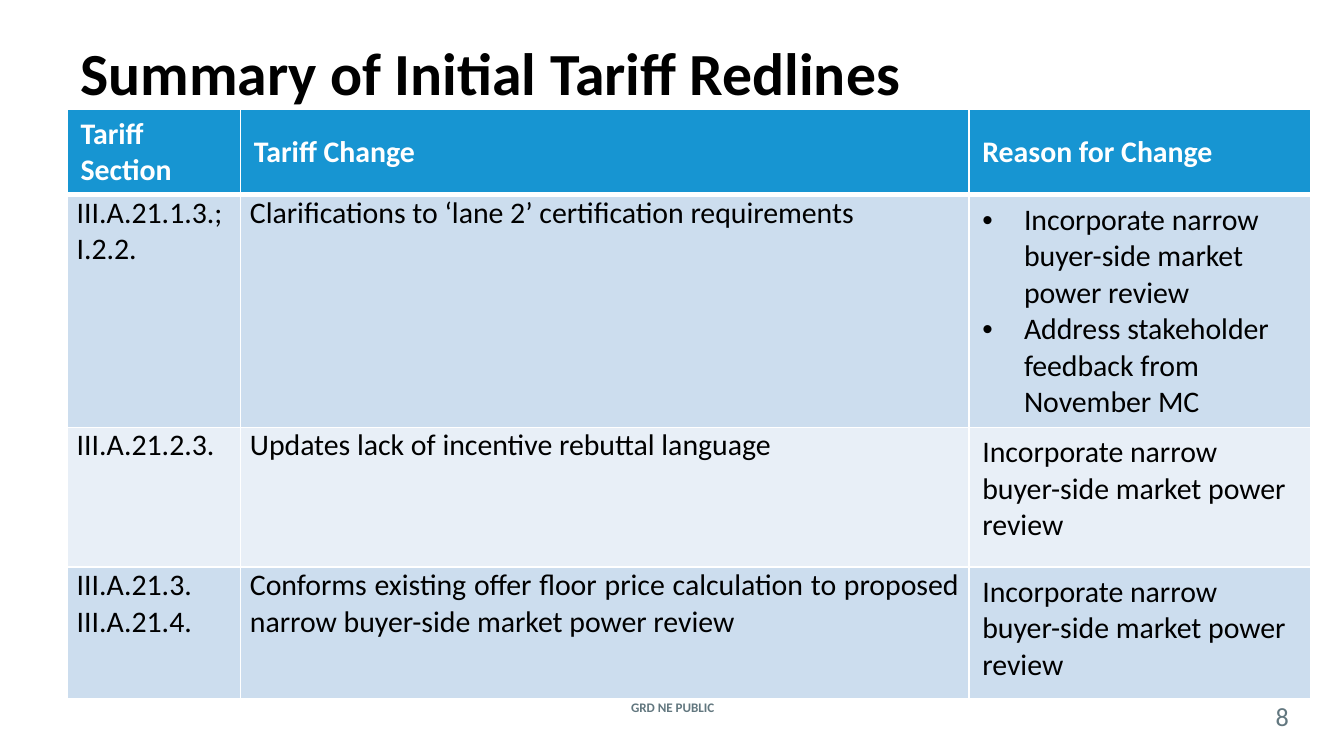
from pptx import Presentation
from pptx.dml.color import RGBColor
from pptx.enum.text import MSO_ANCHOR, PP_ALIGN
from pptx.oxml import parse_xml
from pptx.oxml.ns import nsdecls
from pptx.util import Inches, Pt

COLORS = {"ink": "000000", "white": "FFFFFF", "gray": "62777F",
          "head": "1795D2", "odd": "CCDDEE", "even": "E8EFF7"}
FONT = "Calibri"
COLS = [1.29, 5.42, 2.54]
ROWS = [0.64, 1.73, 1.04, 0.98]
REASON = "Incorporate narrow buyer-side market power review"
CELLS = [
    ["Tariff Section", "Tariff Change", "Reason for Change"],
    ["III.A.21.1.3.;\nI.2.2.",
     "Clarifications to ‘lane 2’ certification requirements",
     REASON + "\nAddress stakeholder feedback from November MC"],
    ["III.A.21.2.3.", "Updates lack of incentive rebuttal language", REASON],
    ["III.A.21.3.\nIII.A.21.4.",
     "Conforms existing offer floor price calculation to proposed "
     "narrow buyer-side market power review", REASON],
]


def color(key):
    return RGBColor.from_string(COLORS[key])


def style(frame, size, key, bold=False, align=PP_ALIGN.LEFT):
    for para in frame.paragraphs:
        para.alignment = align
        for run in para.runs:
            font = run.font
            font.name, font.size, font.bold = FONT, Pt(size), bold
            font.color.rgb = color(key)


def add_text(slide, box, text, size, key, bold=False,
             align=PP_ALIGN.CENTER, pad=(0.1, 0.05)):
    frame = slide.shapes.add_textbox(*map(Inches, box)).text_frame
    frame.word_wrap = True
    frame.vertical_anchor = MSO_ANCHOR.MIDDLE
    frame.margin_left = frame.margin_right = Inches(pad[0])
    frame.margin_top = frame.margin_bottom = Inches(pad[1])
    frame.text = text
    style(frame, size, key, bold, align)


def add_lines(cell, low):
    # White rules, with the bottom one of its own weight
    props = cell._tc.get_or_add_tcPr()
    for side, width in (("L", 1), ("R", 1), ("T", 1), ("B", low)):
        props.append(parse_xml(
            f'<a:ln{side} {nsdecls("a")} w="{Pt(width)}"><a:solidFill>'
            f'<a:srgbClr val="{COLORS["white"]}"/></a:solidFill></a:ln{side}>'))


def add_bullets(frame):
    for para in frame.paragraphs:
        props = para._p.get_or_add_pPr()
        props.set("marL", str(Inches(0.31)))
        props.set("indent", str(-Inches(0.31)))
        for tag in ('buFont {} typeface="Arial"', 'buChar {} char="•"'):
            props.append(parse_xml(f'<a:{tag.format(nsdecls("a"))}/>'))


def fill_cell(cell, text, row, col):
    head = row == 0
    roomy = head or col == 2
    cell.margin_left = cell.margin_right = Inches(0.1 if roomy else 0.07)
    cell.margin_top = cell.margin_bottom = Inches(0.05 if roomy else 0)
    cell.vertical_anchor = MSO_ANCHOR.MIDDLE if head else MSO_ANCHOR.TOP
    add_lines(cell, 3 if head else 1)
    cell.fill.solid()
    cell.fill.fore_color.rgb = color("head" if head else "odd" if row % 2 else "even")
    frame = cell.text_frame
    frame.text = text
    if col == 2 and "\n" in text:
        add_bullets(frame)
    align = PP_ALIGN.JUSTIFY if col == 1 and row > 1 else PP_ALIGN.LEFT
    style(frame, 16, "white" if head else "ink", head, align)


def add_grid(slide, left, top):
    box = map(Inches, (left, top, sum(COLS), sum(ROWS)))
    table = slide.shapes.add_table(len(ROWS), len(COLS), *box).table
    for col, width in zip(table.columns, COLS):
        col.width = Inches(width)
    for row, height in zip(table.rows, ROWS):
        row.height = Inches(height)
    for r, line in enumerate(CELLS):
        for c, text in enumerate(line):
            fill_cell(table.cell(r, c), text, r, c)


def add_footer(slide, left, top):
    add_text(slide, (left, top, 1.47, 0.21), "GRD NE PUBLIC", 7, "gray", True)
    add_text(slide, (left + 5.06, top + 0.06, 0.42, 0.22), "8", 14, "gray", pad=(0, 0))


def main():
    deck = Presentation()
    # Wide 16:9 page
    deck.slide_width = Inches(10)
    deck.slide_height = deck.slide_width * 9 // 16
    slide = deck.slides.add_slide(deck.slide_layouts[6])
    add_footer(slide, 4.27, 5.16)
    add_text(slide, (0.5, 0.06, 9, 0.94), "Summary of Initial Tariff Redlines",
             32, "ink", True, PP_ALIGN.LEFT)
    add_grid(slide, 0.5, 0.81)
    deck.save("out.pptx")


if __name__ == "__main__":
    main()
